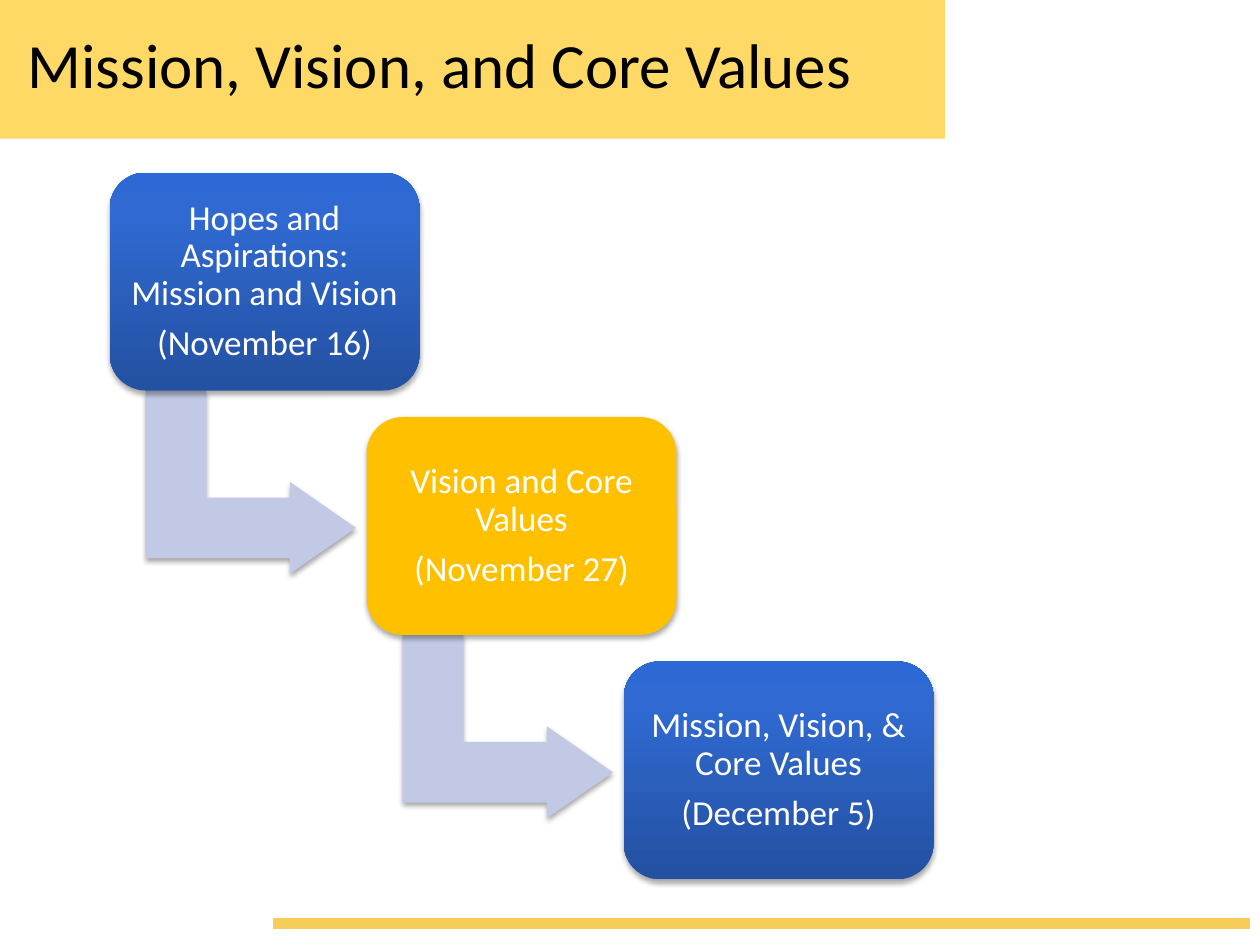
import copy
import pptx
import pptx.dml.color
import pptx.enum.shapes
import pptx.enum.text
import pptx.oxml
import pptx.oxml.ns
import pptx.util
import lxml.etree

Inches = pptx.util.Inches
Pt = pptx.util.Pt
Kind = pptx.enum.shapes.MSO_SHAPE
Align = pptx.enum.text.PP_ALIGN
theme = {
    "face": "Calibri", "head": 36, "body": 20,
    "dark": "000000", "light": "FFFFFF", "band": "FFD966", "rule": "F6CD58",
    "arrow": "C1C9E4", "gold": "FFC000",
    "blue": [(0, "2451A1"), (0.8, "2F69D1"), (1, "2C69D5")],
}
shade = (
    '<a:effectLst xmlns:a="http://schemas.openxmlformats.org/drawingml/2006/main">'
    '<a:outerShdw blurRad="40000" dist="23000" dir="5400000" rotWithShape="0">'
    '<a:srgbClr val="000000"><a:alpha val="35000"/></a:srgbClr>'
    '</a:outerShdw></a:effectLst>'
)


def tint(code):
    return pptx.dml.color.RGBColor.from_string(code)


def block(kind, x, y, w, h, fill, lift=True):
    shape = slide.shapes.add_shape(kind, Inches(x), Inches(y), Inches(w), Inches(h))
    shape.shadow.inherit = False
    shape.line.fill.background()
    if fill == "blue":
        shape.fill.gradient()
        shape.fill.gradient_angle = 90
        first = shape.element.spPr.find(".//" + pptx.oxml.ns.qn("a:gs"))
        first.addnext(copy.deepcopy(first))
        for stop, (place, code) in zip(shape.fill.gradient_stops, theme[fill]):
            stop.position = place
            stop.color.rgb = tint(code)
    else:
        shape.fill.solid()
        shape.fill.fore_color.rgb = tint(theme[fill])
    if lift:
        flat = shape.element.spPr.find(pptx.oxml.ns.qn("a:effectLst"))
        flat.getparent().replace(flat, pptx.oxml.parse_xml(shade))
    return shape


deck = pptx.Presentation()
deck.slide_width = Inches(10)
deck.slide_height = Inches(7.5)
slide = deck.slides.add_slide(deck.slide_layouts[6])

block(Kind.RECTANGLE, 0, 0, 7.5, 1.1, "band", False)
rule = slide.shapes.add_connector(
    pptx.enum.shapes.MSO_CONNECTOR.STRAIGHT,
    Inches(2.17), Inches(7.33), Inches(9.92), Inches(7.33))
rule.line.color.rgb = tint(theme["rule"])
rule.line.width = Pt(6)
lxml.etree.SubElement(rule.element.spPr, pptx.oxml.ns.qn("a:effectLst"))

title = slide.shapes.add_textbox(Inches(0.12), Inches(0.08), Inches(7.21), Inches(0.92))
texts = [(title, ["Mission, Vision, and Core Values"], "head", "dark", 0.1,
          {"alignment": Align.LEFT, "line_spacing": 0.9})]

steps = [
    ("Hopes and Aspirations: Mission and Vision", "(November 16)", "blue"),
    ("Vision and Core Values", "(November 27)", "gold"),
    ("Mission, Vision, & Core Values", "(December 5)", "blue"),
]
for i, (goal, date, fill) in enumerate(steps):
    x, y = 0.87 + 2.04 * i, 1.37 + 1.94 * i
    if i < len(steps) - 1:
        arrow = block(Kind.BENT_UP_ARROW, x + 0.39, y + 1.62, 1.46, 1.67, "arrow")
        arrow.rotation = 90
        for j, ratio in enumerate([0.33, 0.25, 0.36]):
            arrow.adjustments[j] = ratio
    card = block(Kind.ROUNDED_RECTANGLE, x, y, 2.46, 1.73, fill)
    texts.append((card, [goal, date], "body", "light", 0.08,
                  {"alignment": Align.CENTER, "line_spacing": 0.9, "space_after": Pt(7)}))

for shape, lines, size, color, inset, style in texts:
    frame = shape.text_frame
    layout = {"word_wrap": True, "vertical_anchor": pptx.enum.text.MSO_ANCHOR.MIDDLE}
    for side in ("left", "right", "top", "bottom"):
        layout["margin_" + side] = Inches(inset)
    for key, value in layout.items():
        setattr(frame, key, value)
    frame.text = "\n".join(lines)
    for para in frame.paragraphs:
        for key, value in style.items():
            setattr(para, key, value)
        for key, value in {"name": theme["face"], "size": Pt(theme[size])}.items():
            setattr(para.font, key, value)
        para.font.color.rgb = tint(theme[color])

deck.save("out.pptx")
